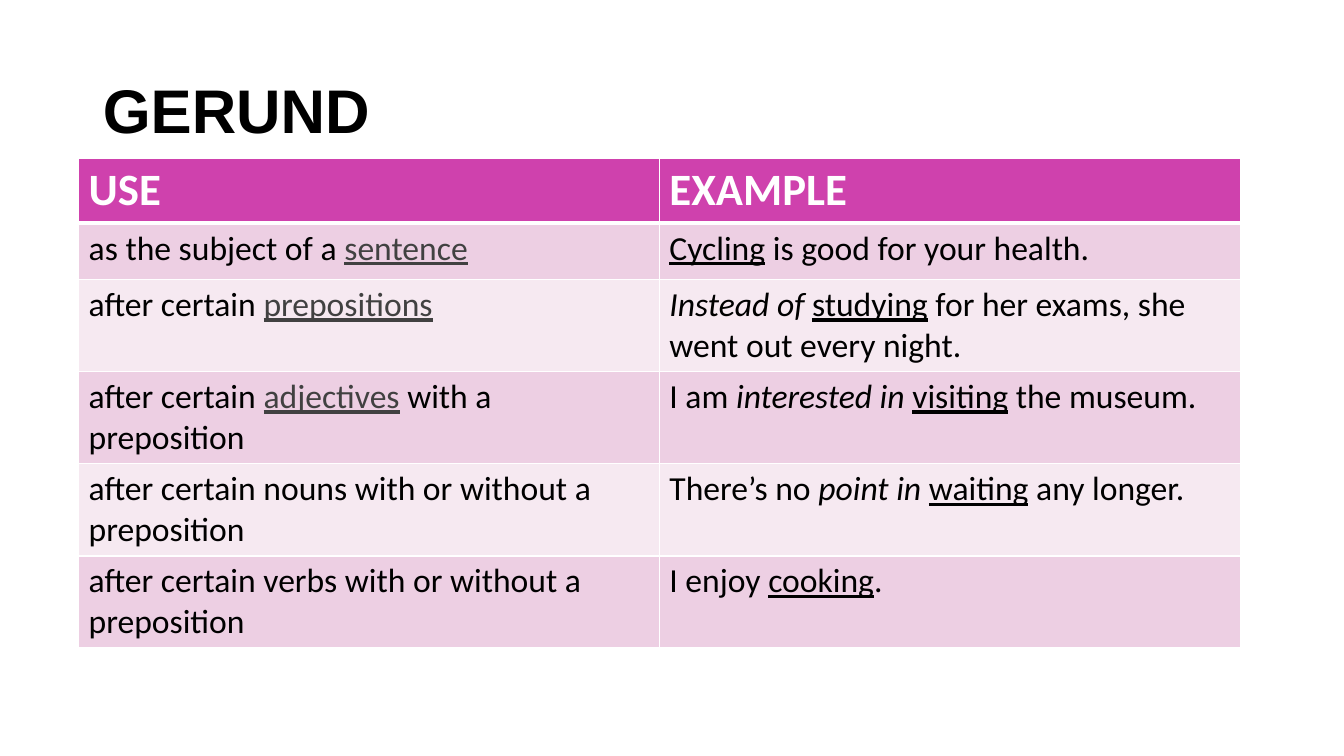
from lxml import etree
from pptx import Presentation, util as u
from pptx.dml.color import RGBColor
from pptx.enum import text
from pptx.oxml import ns

BLACK = RGBColor(0x00, 0x00, 0x00)
WHITE = RGBColor(0xFF, 0xFF, 0xFF)
GREY = RGBColor(0x41, 0x41, 0x41)
MAGENTA = RGBColor(0xCF, 0x41, 0xAD)
PINK = RGBColor(0xED, 0xCF, 0xE3)
PALE_PINK = RGBColor(0xF6, 0xE9, 0xF1)

PLAIN, ITALIC, UNDERLINED, TERM = range(4)

HEADINGS = ("USE", "EXAMPLE")
USES = [
    ([("as the subject of a ", PLAIN), ("sentence", TERM)],
     [("Cycling", UNDERLINED), (" is good for your health.", PLAIN)]),
    ([("after certain ", PLAIN), ("prepositions", TERM)],
     [("Instead of ", ITALIC), ("studying", UNDERLINED),
      (" for her exams, she went out every night.", PLAIN)]),
    ([("after certain ", PLAIN), ("adjectives", TERM),
      (" with a preposition", PLAIN)],
     [("I am ", PLAIN), ("interested in ", ITALIC),
      ("visiting", UNDERLINED), (" the museum.", PLAIN)]),
    ([("after certain nouns with or without a preposition", PLAIN)],
     [("There’s no ", PLAIN), ("point in ", ITALIC),
      ("waiting", UNDERLINED), (" any longer.", PLAIN)]),
    ([("after certain verbs with or without a preposition", PLAIN)],
     [("I enjoy ", PLAIN), ("cooking", UNDERLINED), (".", PLAIN)]),
]

COLUMN_WIDTH = u.Inches(5.76)
ROW_HEIGHTS = [u.Inches(h) for h in (0.62, 0.56, 0.91, 0.91, 0.91, 0.91)]


def add_title(page, wording):
    title = page.shapes.title
    title.left, title.top = u.Inches(0.92), u.Inches(0.4)
    title.width, title.height = u.Inches(11.5), u.Inches(1.45)
    frame = title.text_frame
    frame.text = wording
    frame.vertical_anchor = text.MSO_ANCHOR.MIDDLE
    para = frame.paragraphs[0]
    para.alignment = text.PP_ALIGN.LEFT
    para.line_spacing = 0.9
    style_span(para.runs[0], 44, BLACK, bold=True, face="Arial")


def style_span(span, size, color, bold=False, face="Calibri"):
    font = span.font
    font.name, font.size, font.bold = face, u.Pt(size), bold
    font.color.rgb = color


def set_borders(cell, top, bottom):
    """Draw white cell edges; top and bottom are widths in points."""
    properties = cell._tc.get_or_add_tcPr()
    for edge, width in (("L", 1), ("R", 1), ("T", top), ("B", bottom)):
        line = etree.SubElement(properties, ns.qn(f"a:ln{edge}"), w=str(u.Pt(width)))
        fill = etree.SubElement(line, ns.qn("a:solidFill"))
        etree.SubElement(fill, ns.qn("a:srgbClr"), val=str(WHITE))


def paint_cell(cell, color, top=1, bottom=1):
    set_borders(cell, top, bottom)
    cell.fill.solid()
    cell.fill.fore_color.rgb = color


def write_heading(cell, wording):
    cell.text = wording
    style_span(cell.text_frame.paragraphs[0].runs[0], 32, WHITE, bold=True)
    paint_cell(cell, MAGENTA, bottom=3)


def write_phrases(cell, phrases):
    para = cell.text_frame.paragraphs[0]
    for wording, style in phrases:
        span = para.add_run()
        span.text = wording
        style_span(span, 24, GREY if style == TERM else BLACK)
        span.font.italic = style == ITALIC
        span.font.underline = style in (UNDERLINED, TERM)


def add_uses_table(page):
    table = page.shapes.add_table(
        len(ROW_HEIGHTS), len(HEADINGS), u.Inches(0.78), u.Inches(1.57),
        COLUMN_WIDTH * len(HEADINGS), sum(ROW_HEIGHTS)).table
    for column in table.columns:
        column.width = COLUMN_WIDTH
    for row, height in zip(table.rows, ROW_HEIGHTS):
        row.height = height
    for column, heading in enumerate(HEADINGS):
        write_heading(table.cell(0, column), heading)
    for row, use in enumerate(USES, start=1):
        for column, phrases in enumerate(use):
            cell = table.cell(row, column)
            write_phrases(cell, phrases)
            paint_cell(cell, PINK if row % 2 else PALE_PINK,
                       top=3 if row == 1 else 1)


def main():
    deck = Presentation()
    deck.slide_width, deck.slide_height = u.Inches(13.33), u.Inches(7.5)
    page = deck.slides.add_slide(deck.slide_layouts[5])
    add_title(page, "GERUND")
    add_uses_table(page)
    deck.save("out.pptx")


if __name__ == "__main__":
    main()
